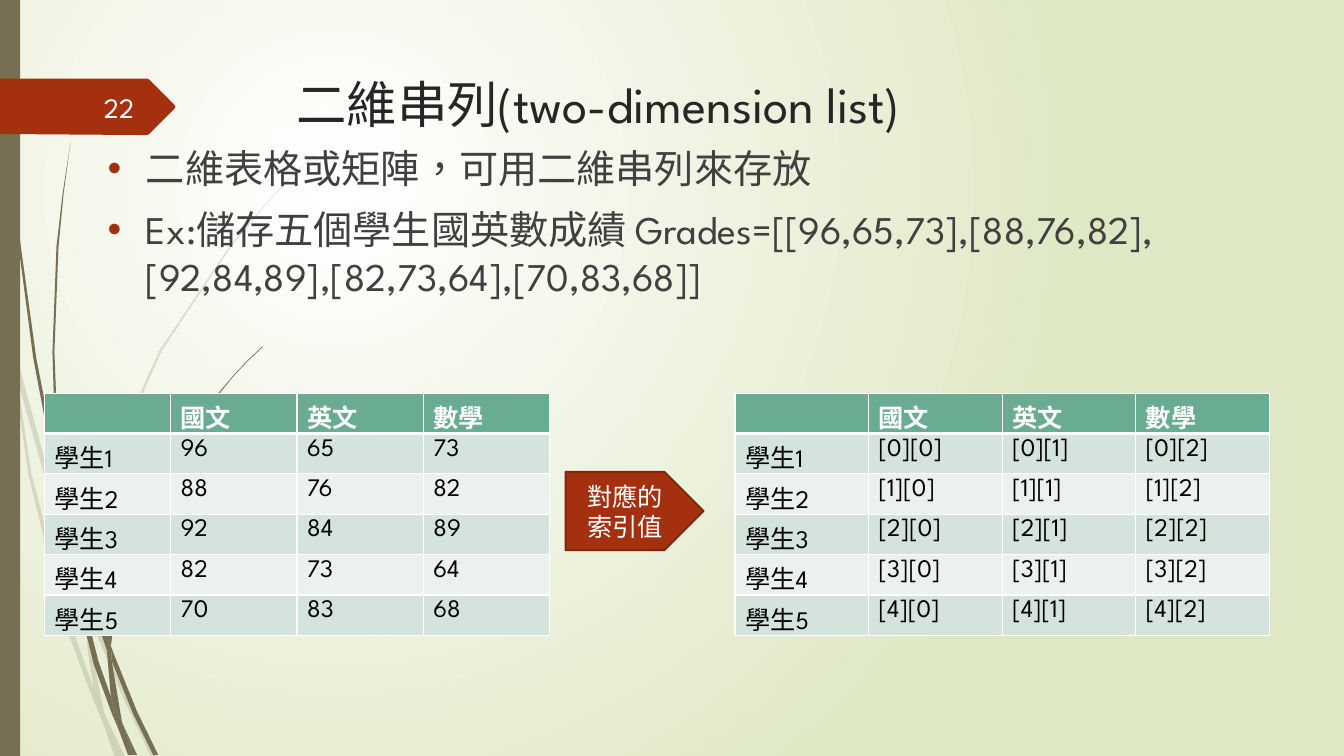
from dataclasses import dataclass

from lxml.etree import SubElement
from pptx import Presentation
from pptx.dml.color import RGBColor as RGB
from pptx.enum.shapes import MSO_SHAPE as SHAPE
from pptx.enum.text import MSO_ANCHOR as ANCHOR, PP_ALIGN as ALIGN
from pptx.oxml.ns import qn
from pptx.util import Inches, Pt


@dataclass(frozen=True)
class Theme:
    font: str = "League Spartan"
    white: str = "FFFFFF"
    meadow: str = "DFE8C4"
    olive: str = "766F54"
    red: str = "A53010"
    dark_red: str = "7A240C"
    ink: str = "262626"
    grey: str = "404040"
    black: str = "000000"
    number: str = "FEFFFF"
    header: str = "6AAC91"
    bands: tuple = ("D4E3DC", "EBF1EE")
    title_size: int = 36
    body_size: int = 28
    number_size: int = 20
    small_size: int = 18


T = Theme()
COLS, ROWS = 1333, 750  # grid that every box is measured in
UNIT = Inches(7.5) // ROWS

# Outlines of the grass blades, as grid points
PALE_BLADES = [
    [(11, 350), (9, 322), (0, 282), (0, 299), (10, 344)],
    [(58, 522), (84, 599), (85, 586), (62, 520), (14, 345), (17, 376)],
    [(92, 607), (88, 596), (88, 610), (123, 694), (150, 751), (155, 751), (127, 692)],
    [(119, 751), (124, 751), (105, 711)],
    [(93, 683), (70, 619), (31, 469), (17, 376), (11, 350), (28, 470), (65, 621),
     (92, 693), (101, 714), (99, 707)],
    [(84, 599), (87, 646), (93, 683), (96, 692), (105, 711), (103, 706), (91, 646),
     (88, 610), (88, 608)],
    [(88, 584), (110, 462), (160, 349), (229, 245), (268, 198), (290, 175), (312, 154),
     (312, 153), (289, 175), (268, 197), (228, 244), (158, 348), (107, 461), (85, 584),
     (85, 586), (88, 596)],
    [(101, 714), (114, 751), (119, 751)],
    [(88, 608), (88, 610), (88, 596), (85, 586), (84, 599)],
    [(96, 692), (93, 683), (99, 707), (101, 714), (119, 751), (105, 711)],
]
DARK_BLADES = [
    [(7, 110), (17, 233), (33, 355), (56, 477), (57, 481), (55, 457), (55, 453),
     (36, 355), (19, 232), (8, 109), (5, 48), (4, 0), (3, 0), (4, 48)],
    [(88, 592), (106, 645), (106, 633), (106, 631), (93, 590), (60, 472), (64, 505)],
    [(113, 649), (110, 641), (111, 656), (132, 708), (152, 749), (157, 749), (136, 706)],
    [(110, 691), (98, 657), (72, 556), (64, 505), (57, 477), (68, 557), (93, 659),
     (111, 708), (117, 722), (116, 717)],
    [(60, 472), (58, 453), (54, 349), (58, 245), (63, 193), (70, 141), (62, 193),
     (56, 245), (52, 349), (55, 449)],
    [(133, 749), (136, 749), (122, 719)],
    [(57, 477), (64, 505), (60, 472), (55, 449), (55, 453)],
    [(111, 633), (125, 552), (158, 476), (205, 406), (231, 374), (245, 359), (261, 344),
     (260, 344), (245, 358), (231, 373), (204, 405), (156, 474), (122, 551), (106, 631),
     (110, 641)],
    [(117, 722), (127, 749), (131, 749)],
    [(106, 645), (110, 691), (116, 706), (122, 719), (121, 716), (111, 656), (109, 651)],
    [(106, 645), (109, 651), (111, 656), (110, 641), (106, 631), (106, 633)],
    [(116, 706), (110, 691), (116, 717), (117, 722), (130, 749), (133, 749), (122, 719)],
]
RIBBON = [(0, 0), (146, 0), (148, 1), (173, 26), (174, 28), (173, 30), (148, 55),
          (146, 56), (136, 56), (0, 55)]

SUBJECTS = ["國文", "英文", "數學"]
GRADES = [[96, 65, 73], [88, 76, 82], [92, 84, 89], [82, 73, 64], [70, 83, 68]]
INDEXES = [[f"[{i}][{j}]" for j in range(3)] for i in range(5)]


def emu(box):
    return [v * UNIT for v in box]


def paint(sp, color, line=None):
    sp.shadow.inherit = False
    sp.fill.solid()
    sp.fill.fore_color.rgb = RGB.from_string(color)
    if line:
        sp.line.color.rgb = RGB.from_string(line)
        sp.line.width = Pt(1.25)
    else:
        sp.line.fill.background()


def write(p, text, size, color, bold=False):
    p.text = text
    for r in p.runs:
        r.font.name, r.font.size, r.font.bold = T.font, Pt(size), bold
        r.font.color.rgb = RGB.from_string(color)
        rPr = r._r.get_or_add_rPr()
        rPr.set("lang", "zh-TW")
        rPr.set("altLang", "en-US")


def text_box(s, box):
    tf = s.shapes.add_textbox(*emu(box)).text_frame
    tf.word_wrap = True
    return tf


def outline(s, points, color, origin=(0, 0), alpha=None):
    """Draw a closed shape whose points are offset from the origin."""
    pts = [(x + origin[0], y + origin[1]) for x, y in points]
    fb = s.shapes.build_freeform(*pts[0], scale=UNIT)
    fb.add_line_segments(pts[1:], close=True)
    sp = fb.convert_to_shape()
    paint(sp, color)
    if alpha:
        clr = sp._element.spPr.find(qn("a:solidFill"))[0]
        SubElement(clr, qn("a:alpha")).set("val", str(alpha * 1000))


def background(s):
    fill = s.background.fill
    fill.gradient()
    for stop, color in zip(fill.gradient_stops, (T.white, T.meadow)):
        stop.color.rgb = RGB.from_string(color)
    grad = s.element.find(".//" + qn("a:gradFill"))
    lin = grad.find(qn("a:lin"))
    circle = SubElement(grad, qn("a:path"))
    circle.set("path", "circle")
    center = SubElement(circle, qn("a:fillToRect"))
    for side, share in zip("ltrb", (50, 50, 100, 100)):
        center.set(side, str(share * 1000))
    grad.replace(lin, circle)


def grass(s, box):
    for blade in PALE_BLADES:
        outline(s, blade, T.olive, box[:2], alpha=20)
    for blade in DARK_BLADES:
        outline(s, blade, T.olive, box[:2])
    paint(s.shapes.add_shape(SHAPE.RECTANGLE, *emu(box)), T.olive)


def page_number(s, box, number):
    x, y, w, h = box
    outline(s, RIBBON, T.red, (x, y))
    tf = text_box(s, (x + 58, y + 8, 85, 40))
    tf.vertical_anchor = ANCHOR.MIDDLE
    write(tf.paragraphs[0], number, T.number_size, T.number)
    tf.paragraphs[0].alignment = ALIGN.RIGHT


def bullets(s, box, lines):
    tf = text_box(s, box)
    for i, line in enumerate(lines):
        p = tf.add_paragraph() if i else tf.paragraphs[0]
        write(p, line, T.body_size, T.grey)
        p.space_before = Pt(10)
        pPr = p._p.get_or_add_pPr()
        pPr.set("marL", str(38 * UNIT))
        pPr.set("indent", str(-38 * UNIT))
        clr = SubElement(SubElement(pPr, qn("a:buClr")), qn("a:srgbClr"))
        clr.set("val", T.red)
        SubElement(pPr, qn("a:buFont")).set("typeface", "Arial")
        SubElement(pPr, qn("a:buChar")).set("char", "•")


def borders(cell, bottom):
    tcPr = cell._tc.get_or_add_tcPr()
    for side, width in zip("LRTB", (1, 1, 1, bottom)):
        ln = SubElement(tcPr, qn("a:ln" + side))
        ln.set("w", str(Pt(width)))
        clr = SubElement(SubElement(ln, qn("a:solidFill")), qn("a:srgbClr"))
        clr.set("val", T.white)


def student_table(s, box, values):
    rows = [["", *SUBJECTS]]
    rows += [[f"學生{i}", *row] for i, row in enumerate(values, 1)]
    table = s.shapes.add_table(len(rows), len(rows[0]), *emu(box)).table
    for i, row in enumerate(rows):
        head = i == 0
        for j, value in enumerate(row):
            cell = table.cell(i, j)
            borders(cell, 3 if head else 1)
            cell.fill.solid()
            cell.fill.fore_color.rgb = RGB.from_string(T.header if head else T.bands[(i - 1) % 2])
            write(cell.text_frame.paragraphs[0], str(value), T.small_size,
                  T.white if head else T.black, head)


def arrow(s, box, text):
    sp = s.shapes.add_shape(SHAPE.PENTAGON, *emu(box))
    paint(sp, T.red, T.dark_red)
    tf = sp.text_frame
    tf.word_wrap, tf.vertical_anchor = True, ANCHOR.MIDDLE
    write(tf.paragraphs[0], text, T.small_size, T.white)
    tf.paragraphs[0].alignment = ALIGN.CENTER


def list_slide(prs):
    s = prs.slides.add_slide(prs.slide_layouts[6])
    background(s)
    grass(s, (0, 0, 20, ROWS))
    title = text_box(s, (284, 68, 975, 140))
    write(title.paragraphs[0], "二維串列(two-dimension list)", T.title_size, T.ink)
    bullets(s, (97, 138, 1236, 182), [
        "二維表格或矩陣，可用二維串列來存放",
        "Ex:儲存五個學生國英數成績 Grades=[[96,65,73],[88,76,82],"
        "[92,84,89],[82,73,64],[70,83,68]]"])
    page_number(s, (0, 78, 174, 56), "22")
    student_table(s, (44, 390, 501, 240), GRADES)
    student_table(s, (729, 390, 530, 240), INDEXES)
    arrow(s, (561, 468, 137, 78), "對應的索引值")


def main():
    prs = Presentation()
    prs.slide_width, prs.slide_height = COLS * UNIT, ROWS * UNIT
    list_slide(prs)
    prs.save("out.pptx")


if __name__ == "__main__":
    main()
